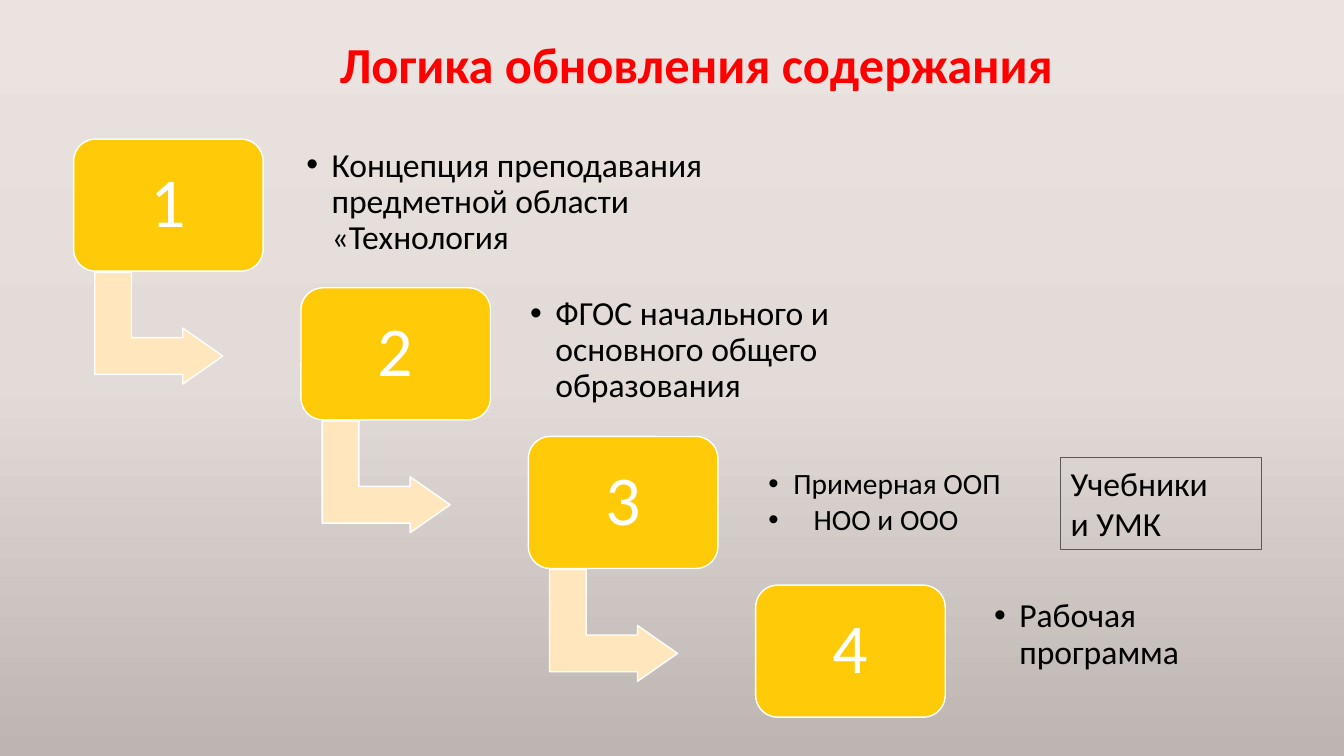
from copy import deepcopy
from dataclasses import dataclass

from lxml.etree import SubElement
from pptx import Presentation
from pptx.dml.color import RGBColor
from pptx.enum.shapes import MSO_SHAPE
from pptx.enum.text import MSO_ANCHOR, MSO_AUTO_SIZE, PP_ALIGN
from pptx.oxml.ns import qn
from pptx.util import Inches, Pt


@dataclass(frozen=True)
class Theme:
    font: str = "Calibri"
    title: str = "FF0000"
    text: str = "000000"
    light: str = "FFFFFF"
    step: str = "FFCA08"
    arrow: str = "FFE6BD"
    frame: str = "595959"
    background: tuple = ("EBE3DF", "E2DBD8", "BCB5B2")
    title_size: float = 36
    number_size: float = 50
    body_size: float = 24
    small_size: float = 21


@dataclass(frozen=True)
class Step:
    lines: tuple
    left: float
    top: float
    width: float
    inset: float = 0.1
    size: float = Theme.body_size
    indents: tuple = (0.25,)


THEME = Theme()
STEPS = (
    Step(("Концепция преподавания предметной области «Технология",), 2.94, 1.48, 4.28),
    Step(("ФГОС начального и основного общего образования",), 5.16, 2.95, 3.78),
    Step(("Примерная ООП", "НОО и ООО"), 7.51, 4.46, 2.59, 0.11,
         THEME.small_size, (0.25, 0.45)),
    Step(("Рабочая программа",), 9.73, 5.77, 2.37, 0.13),
)
STEP_LEFT, STEP_TOP = 0.73, 1.38
STEP_WIDTH, STEP_HEIGHT = 1.88, 1.31
STEP_RIGHT, STEP_DOWN = 2.255, 1.475
CAPTION_HEIGHT = 1.06


def rgb(value: str) -> RGBColor:
    return RGBColor.from_string(value)


def write(shape, lines, *, size=THEME.body_size, color=THEME.text, bold=False,
          align=PP_ALIGN.LEFT, anchor=MSO_ANCHOR.MIDDLE, inset=(0.1, 0.05),
          spacing=0.9, after=0, indents=()) -> None:
    """Fill a shape with paragraphs; indents turn them into bullets."""
    frame = shape.text_frame
    frame.word_wrap = True
    frame.auto_size = MSO_AUTO_SIZE.NONE
    frame.vertical_anchor = anchor
    frame.margin_left = frame.margin_right = Inches(inset[0])
    frame.margin_top = frame.margin_bottom = Inches(inset[1])
    for index, line in enumerate(lines):
        para = frame.add_paragraph() if index else frame.paragraphs[0]
        para.alignment = align
        para.line_spacing = spacing
        para.space_before, para.space_after = Pt(0), Pt(after)
        span = para.add_run()
        span.text = line
        span.font.name, span.font.size, span.font.bold = THEME.font, Pt(size), bold
        span.font.color.rgb = rgb(color)
        if indents:
            properties = para._p.get_or_add_pPr()
            indent = Inches(indents[index])
            properties.set("marL", str(indent))
            properties.set("indent", str(-indent))
            SubElement(properties, qn("a:buFont"), typeface="Arial")
            SubElement(properties, qn("a:buChar"), char="•")


def add_block(page, kind, left, top, width, height, *, fill=None,
              line=THEME.light, line_width=1.0, adjustments=()):
    block = page.shapes.add_shape(
        kind, Inches(left), Inches(top), Inches(width), Inches(height))
    block.shadow.inherit = False
    if fill:
        block.fill.solid()
        block.fill.fore_color.rgb = rgb(fill)
    else:
        block.fill.background()
    block.line.color.rgb = rgb(line)
    block.line.width = Pt(line_width)
    for index, value in enumerate(adjustments):
        block.adjustments[index] = value
    return block


def paint_background(page) -> None:
    fill = page.background.fill
    fill.gradient()
    fill.gradient_angle = 270
    first = fill.gradient_stops[0]._gs
    first.addnext(deepcopy(first))
    for stop, color, position in zip(fill.gradient_stops, THEME.background, (0, 0.5, 1)):
        stop.color.rgb = rgb(color)
        stop.position = position


def add_step(page, index: int, step: Step) -> None:
    left = STEP_LEFT + index * STEP_RIGHT
    top = STEP_TOP + index * STEP_DOWN
    # Arrow to the next step
    if index < len(STEPS) - 1:
        arrow = add_block(page, MSO_SHAPE.BENT_UP_ARROW, left + 0.29, top + 1.24,
                          1.11, 1.27, fill=THEME.arrow, adjustments=(0.328, 0.25, 0.358))
        arrow.rotation = 90
    # Numbered block
    block = add_block(page, MSO_SHAPE.ROUNDED_RECTANGLE, left, top, STEP_WIDTH,
                      STEP_HEIGHT, fill=THEME.step, adjustments=(0.167,))
    write(block, [str(index + 1)], size=THEME.number_size, color=THEME.light,
          align=PP_ALIGN.CENTER)
    # Bulleted caption
    caption = page.shapes.add_textbox(Inches(step.left), Inches(step.top),
                                      Inches(step.width), Inches(CAPTION_HEIGHT))
    write(caption, step.lines, size=step.size, inset=(step.inset, step.inset),
          after=3, indents=step.indents)


def main() -> None:
    deck = Presentation()
    deck.slide_width, deck.slide_height = Inches(13.33), Inches(7.5)
    page = deck.slides.add_slide(deck.slide_layouts[5])
    paint_background(page)

    # Title
    title = page.shapes.title
    title.left, title.top = Inches(3.27), Inches(0.15)
    title.width, title.height = Inches(8.45), Inches(1.04)
    write(title, ["Логика обновления содержания"], size=THEME.title_size,
          color=THEME.title, bold=True)

    # Staircase of steps
    for index, step in enumerate(STEPS):
        add_step(page, index, step)

    # Framed note beside the third step
    note = add_block(page, MSO_SHAPE.RECTANGLE, 10.52, 4.54, 1.99, 0.91,
                     line=THEME.frame, line_width=0.75)
    write(note, ["Учебники", "и УМК"], anchor=MSO_ANCHOR.TOP, spacing=1.0)

    deck.save("out.pptx")


if __name__ == "__main__":
    main()
